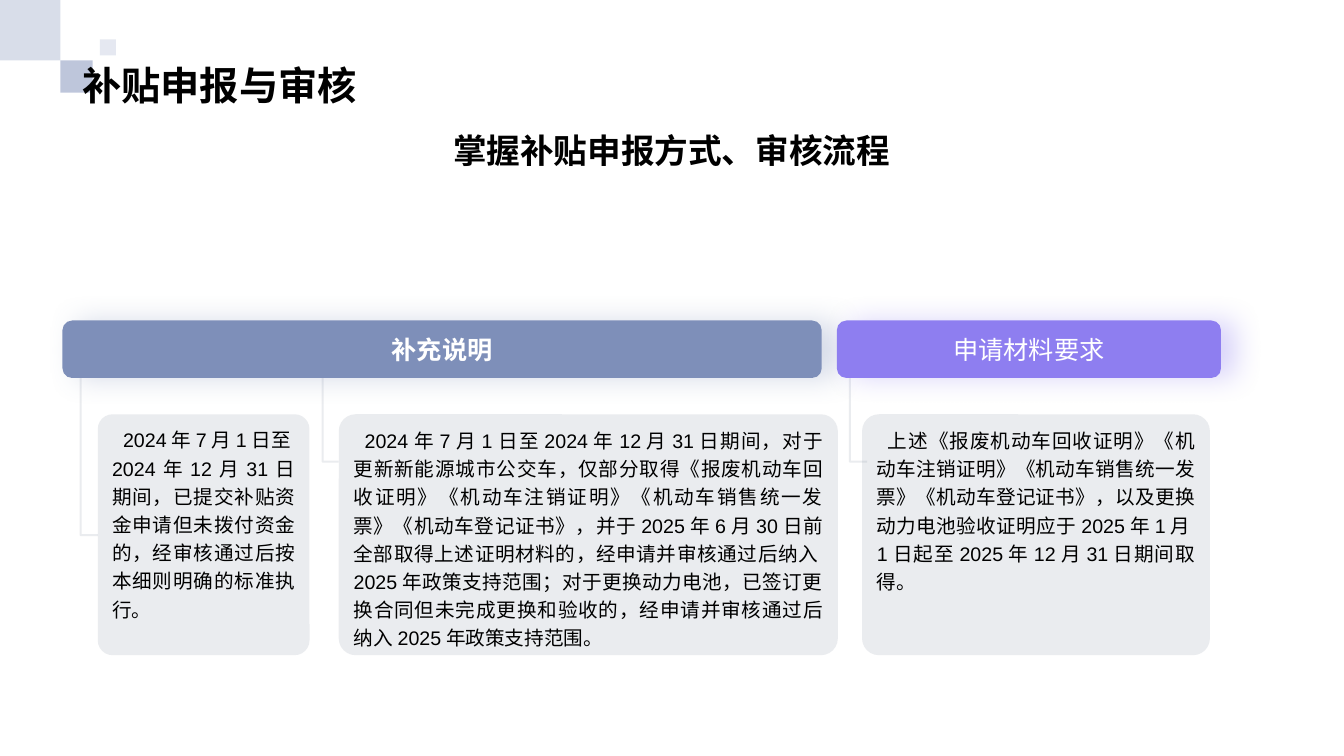
from lxml import etree
from pptx import Presentation
from pptx.dml.color import RGBColor
from pptx.enum.shapes import MSO_CONNECTOR, MSO_SHAPE
from pptx.enum.text import MSO_ANCHOR, PP_ALIGN
from pptx.oxml.ns import qn
from pptx.util import Pt

RECT, ROUND = MSO_SHAPE.RECTANGLE, MSO_SHAPE.ROUNDED_RECTANGLE
ELBOW = MSO_CONNECTOR.ELBOW
TOP, MID, LOW = MSO_ANCHOR.TOP, MSO_ANCHOR.MIDDLE, MSO_ANCHOR.BOTTOM
LEFT, CENTER, JUST = PP_ALIGN.LEFT, PP_ALIGN.CENTER, PP_ALIGN.JUSTIFY
PX = 9144  # 100 px to the inch
BLUE, VIOLET, GREY = "7E8FB9", "8E7EF0", "778495"
BLACK, WHITE = "000000", "FFFFFF"


def paint(fill, color, alpha=100):
    fill.solid()
    fill.fore_color.rgb = RGBColor.from_string(color)
    if alpha < 100:
        tone = fill._xPr.find(".//" + qn("a:srgbClr"))
        etree.SubElement(tone, qn("a:alpha")).set("val", str(alpha * 1000))


def write(shape, text, size, color, bold, align, anchor):
    frame = shape.text_frame
    frame.word_wrap = True
    frame.vertical_anchor = anchor
    para = frame.paragraphs[0]
    para.alignment = align
    run = para.add_run()
    run.text = text
    run.font.name = "Arial"
    run.font.size = Pt(size)
    run.font.bold = bold
    paint(run.font.fill, color)
    return para


prs = Presentation()
prs.slide_width, prs.slide_height = 1333 * PX, 750 * PX
slide = prs.slides.add_slide(prs.slide_layouts[6])
shapes = slide.shapes

# Corner squares
for x, y, side, alpha in [(0, 0, 60, 30), (60, 60, 32, 50), (99, 39, 16, 20)]:
    square = shapes.add_shape(RECT, x * PX, y * PX, side * PX, side * PX)
    square.shadow.inherit = False
    square.line.fill.background()
    paint(square.fill, BLUE, alpha)

# Title and subtitle
for y, high, text, size, align, anchor in [
    (14, 98, "补贴申报与审核", 28, LEFT, LOW),
    (124, 91, "掌握补贴申报方式、审核流程", 24, CENTER, TOP),
]:
    box = shapes.add_textbox(72 * PX, y * PX, 1188 * PX, high * PX)
    write(box, text, size, BLACK, True, align, anchor)

# Elbows from header to card: down, then right
for x, y, run, drop in [(80, 371, 17, 160), (320, 375, 16, 83), (843, 375, 17, 83)]:
    midx, midy = (x + run / 2) * PX, (y + drop / 2) * PX
    dx, dy = drop * PX / 2, run * PX / 2
    elbow = shapes.add_connector(
        ELBOW, int(midx + dx), int(midy - dy), int(midx - dx), int(midy + dy))
    elbow.line.width = Pt(1.5)
    paint(elbow.line.fill, GREY, 15)
    prop = elbow._element.spPr
    prop.find(qn("a:xfrm")).set("rot", "16200000")
    prop.find(qn("a:prstGeom")).set("prst", "bentConnector2")
    etree.SubElement(prop, qn("a:effectLst"))

# Header bars with a soft shadow to the right
for x, wide, color, text, bold in [
    (62, 753, BLUE, "补充说明", True),
    (830, 381, VIOLET, "申请材料要求", False),
]:
    bar = shapes.add_shape(ROUND, x * PX, 318 * PX, wide * PX, 57 * PX)
    bar.shadow.inherit = False
    bar.line.fill.background()
    paint(bar.fill, color)
    glow = etree.SubElement(
        bar._element.spPr.find(qn("a:effectLst")), qn("a:outerShdw"),
        blurRad=str(Pt(20)), dist=str(Pt(10)), dir="0", algn="ctr", rotWithShape="0")
    tone = etree.SubElement(glow, qn("a:srgbClr"), val=color)
    etree.SubElement(tone, qn("a:alpha"), val="32000")
    write(bar, text, 18, WHITE, bold, CENTER, MID)

# Text cards
for x, wide, text in [
    (97, 210, "2024年7月1日至2024年12月31日期间，已提交补贴资金申请但未拨付资金的，"
              "经审核通过后按本细则明确的标准执行。"),
    (336, 495, "2024年7月1日至2024年12月31日期间，对于更新新能源城市公交车，"
               "仅部分取得《报废机动车回收证明》《机动车注销证明》《机动车销售统一发票》"
               "《机动车登记证书》，并于2025年6月30日前全部取得上述证明材料的，"
               "经申请并审核通过后纳入2025年政策支持范围；对于更换动力电池，"
               "已签订更换合同但未完成更换和验收的，经申请并审核通过后纳入2025年政策支持范围。"),
    (855, 345, "上述《报废机动车回收证明》《机动车注销证明》《机动车销售统一发票》"
               "《机动车登记证书》，以及更换动力电池验收证明应于2025年1月1日起至"
               "2025年12月31日期间取得。"),
]:
    card = shapes.add_shape(ROUND, x * PX, 411 * PX, wide * PX, 239 * PX)
    card.shadow.inherit = False
    card.adjustments[0] = 0.07
    card.line.fill.background()
    paint(card.fill, GREY, 15)
    para = write(card, text, 14, BLACK, False, JUST, TOP)
    para.line_spacing = 1.2
    para._p.get_or_add_pPr().set("indent", str(11 * PX))

prs.save("out.pptx")
